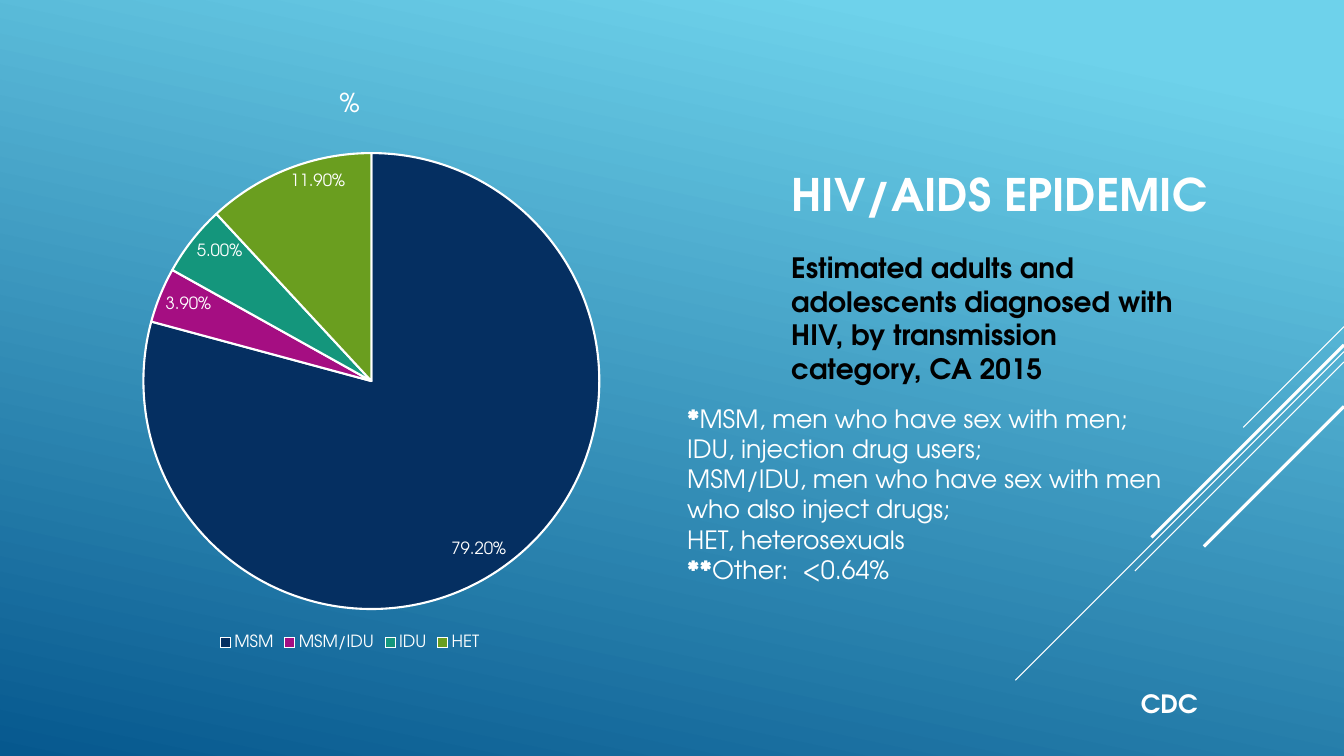
from dataclasses import dataclass

from lxml.etree import SubElement
from pptx import Presentation
from pptx.chart.data import CategoryChartData
from pptx.dml.color import RGBColor as RGB
from pptx.enum.chart import XL_CHART_TYPE as ChartType
from pptx.enum.chart import XL_LABEL_POSITION as LabelPosition
from pptx.enum.chart import XL_LEGEND_POSITION as LegendPosition
from pptx.enum.shapes import MSO_CONNECTOR as Connector
from pptx.enum.text import MSO_ANCHOR as Anchor
from pptx.oxml.ns import qn
from pptx.util import Cm, Pt


@dataclass(frozen=True)
class Theme:
    font: str = "TeX Gyre Adventor"
    white: RGB = RGB(0xFF, 0xFF, 0xFF)
    black: RGB = RGB(0, 0, 0)
    sky: RGB = RGB(0x6E, 0xD2, 0xEB)
    sea: RGB = RGB(0x06, 0x58, 0x8E)
    slices: tuple = (RGB(0x05, 0x2F, 0x61), RGB(0xA5, 0x0E, 0x82),
                     RGB(0x14, 0x96, 0x7C), RGB(0x6A, 0x9E, 0x1F))
    title: float = 32
    subtitle: float = 20
    note: float = 18
    chart_title: float = 18.6
    chart_text: float = 12
    thin: float = 0.75
    thick: float = 2.25
    slice_edge: float = 1.5


THEME = Theme()
WIDTH, HEIGHT = 33.87, 19.05

TRANSMISSION = {"MSM": 0.792, "MSM/IDU": 0.039, "IDU": 0.05, "HET": 0.119}

# Each paragraph is a list of (text, bold) runs.
DEFINITIONS = [
    [("*", True), ("MSM, men who have sex with men;", False)],
    [("IDU, injection drug users;", False)],
    [("MSM/IDU, men who have sex with men", False)],
    [("who also inject drugs;", False)],
    [("HET, heterosexuals", False)],
    [("**", True), ("Other:  <0.64%", False)],
]

# Distance below the top, reach along each axis, line weight
RAYS = [
    (8.23, 2.54, THEME.thin),
    (8.86, 8.28, THEME.thin),
    (9.12, 5.27, THEME.thin),
    (8.69, 4.85, THEME.thick),
    (10.24, 3.53, THEME.thick),
]


def style_font(font, size, color=THEME.white, bold=False):
    font.name = THEME.font
    font.size = Pt(size)
    font.bold = bold
    font.color.rgb = color


def paint_background(slide):
    fill = slide.background.fill
    fill.gradient()
    fill.gradient_angle = 360 - 102
    stops = zip(fill.gradient_stops, (0.1, 1), (THEME.sky, THEME.sea))
    for stop, position, color in stops:
        stop.position = position
        stop.color.rgb = color


def draw_rays(slide, right):
    """Draw the 45-degree lines that run down and left from the right edge."""
    for top, reach, weight in RAYS:
        ray = slide.shapes.add_connector(
            Connector.STRAIGHT, Cm(right), Cm(top), Cm(right - reach), Cm(top + reach))
        ray.line.color.rgb = THEME.white
        ray.line.width = Pt(weight)
        SubElement(ray._element.spPr, qn("a:effectLst"))


def add_text(slide, box, paragraphs, size, color=THEME.white, wrap=True,
             anchor=Anchor.TOP, spacing=1.0, before=0):
    frame = slide.shapes.add_textbox(*map(Cm, box)).text_frame
    frame.word_wrap = wrap
    frame.vertical_anchor = anchor
    for index, runs in enumerate(paragraphs):
        paragraph = frame.add_paragraph() if index else frame.paragraphs[0]
        paragraph.line_spacing = spacing
        paragraph.space_before = Pt(before)
        for text, bold in runs:
            run = paragraph.add_run()
            run.text = text
            style_font(run.font, size, color, bold)


def fix_plot_area(chart, **fractions):
    """Pin the inner plot area to fractions x, y, w and h of the chart."""
    plot_area = chart._chartSpace.chart.plotArea
    layout = plot_area.find(qn("c:layout"))
    if layout is None:
        layout = SubElement(plot_area, qn("c:layout"))
        plot_area.insert(0, layout)
    manual = SubElement(layout, qn("c:manualLayout"))
    settings = {"layoutTarget": "inner", "xMode": "edge", "yMode": "edge", **fractions}
    for tag, value in settings.items():
        SubElement(manual, qn(f"c:{tag}")).set("val", str(value))


def add_transmission_pie(slide, box):
    data = CategoryChartData(number_format="0.00%")
    data.categories = list(TRANSMISSION)
    data.add_series("%", list(TRANSMISSION.values()))
    chart = slide.shapes.add_chart(ChartType.PIE, *map(Cm, box), data).chart
    style_font(chart.font, THEME.chart_text)

    chart.has_title = True
    heading = chart.chart_title.text_frame.paragraphs[0].add_run()
    heading.text = "%"
    style_font(heading.font, THEME.chart_title)
    chart.chart_title.include_in_layout = False

    chart.has_legend = True
    chart.legend.position = LegendPosition.BOTTOM
    chart.legend.include_in_layout = False
    style_font(chart.legend.font, THEME.chart_text)

    pie = chart.plots[0]
    pie.vary_by_categories = True
    for index, color in enumerate(THEME.slices):
        wedge = pie.series[0].points[index].format
        wedge.fill.solid()
        wedge.fill.fore_color.rgb = color
        wedge.line.color.rgb = THEME.white
        wedge.line.width = Pt(THEME.slice_edge)

    labels = pie.series[0].data_labels
    labels.show_value = True
    labels.show_percentage = False
    labels.number_format = "0.00%"
    labels.number_format_is_linked = False
    labels.position = LabelPosition.INSIDE_END
    style_font(labels.font, THEME.chart_text)
    fix_plot_area(chart, x=0.185, y=0.144, w=0.696, h=0.779)


def add_explanation(slide, left, top):
    """Stack title, subtitle and definitions; the definitions hang out to the left."""
    add_text(slide, (left, top, 11.23, 3.81), [[("HIV/AIDS EPIDEMIC", True)]],
             THEME.title, anchor=Anchor.BOTTOM, spacing=0.9)
    subtitle = "Estimated adults and adolescents diagnosed with HIV, by transmission category, CA 2015"
    add_text(slide, (left, top + 4.29, 10.16, 5.82), [[(subtitle, True)]],
             THEME.subtitle, THEME.black, before=4)
    add_text(slide, (left - 2.62, top + 8.13, 12.78, 4.88), DEFINITIONS,
             THEME.note, wrap=False)


def build_epidemic_slide(deck):
    slide = deck.slides.add_slide(deck.slide_layouts[6])
    paint_background(slide)
    draw_rays(slide, WIDTH)
    add_transmission_pie(slide, (0.56, 1.73, 16.51, 14.76))
    add_explanation(slide, 19.69, 1.9)
    add_text(slide, (28.5, 17.22, 2.03, 1.02), [[("CDC", True)]], THEME.note, wrap=False)


def main():
    deck = Presentation()
    deck.slide_width, deck.slide_height = Cm(WIDTH), Cm(HEIGHT)
    build_epidemic_slide(deck)
    deck.save("out.pptx")


if __name__ == "__main__":
    main()
